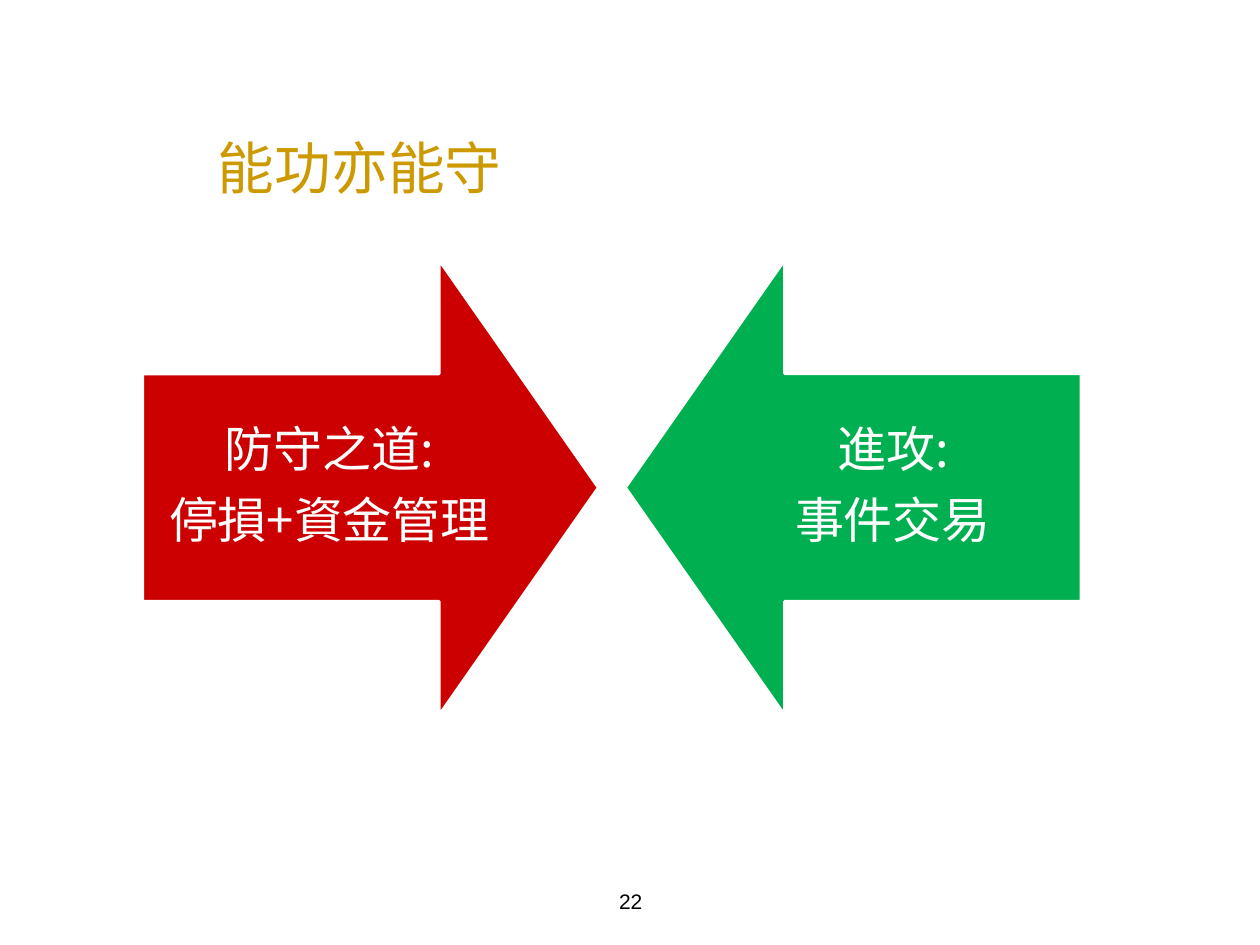
"""Build a slide with two facing arrows, defence against attack."""
from dataclasses import dataclass

from lxml.etree import SubElement
from pptx import Presentation
from pptx.dml.color import RGBColor
from pptx.enum.shapes import MSO_SHAPE as Shape
from pptx.enum.text import MSO_ANCHOR as Anchor, MSO_AUTO_SIZE as AutoSize, PP_ALIGN as Align
from pptx.oxml.ns import qn
from pptx.util import Cm, Pt

COLORS = {"gold": "CC9900", "red": "CC0000", "green": "00B050", "white": "FFFFFF", "black": "000000"}
CJK = "Noto Sans CJK SC"
ARROW_TOP, ARROW_SIZE = 5.23, 9.2
LABEL_TOP, LABEL_WIDTH, LABEL_HEIGHT = 7.52, 7.6, 4.6


@dataclass
class Arrow:
    left: float
    label_left: float
    rotation: int
    color: str
    lines: tuple[str, ...]


ARROWS = (
    Arrow(2.87, 2.84, 270, "red", ("防守之道:", "停損+資金管理")),
    Arrow(12.6, 14.2, 90, "green", ("進攻:", "事件交易")),
)


def rgb(name: str) -> RGBColor:
    return RGBColor.from_string(COLORS[name])


def write(sp, *lines: str, size: float, color: str, font: str = CJK, align=Align.CENTER,
          inset: float | None = None, spacing: float | None = None, after: float = 0) -> None:
    """Fill a shape with one formatted paragraph per line."""
    tf = sp.text_frame
    tf.word_wrap, tf.auto_size, tf.vertical_anchor = True, AutoSize.NONE, Anchor.MIDDLE
    if inset is not None:
        tf.margin_left = tf.margin_right = tf.margin_top = tf.margin_bottom = Cm(inset)
    for i, line in enumerate(lines):
        p = tf.add_paragraph() if i else tf.paragraphs[0]
        p.alignment, p.line_spacing, p.space_after = align, spacing, Pt(after)
        r = p.add_run()
        r.text = line
        r.font.size, r.font.name = Pt(size), font
        r.font.color.rgb = rgb(color)
        SubElement(r._r.get_or_add_rPr(), qn("a:ea"), typeface=font)


def draw_arrow(s, arrow: Arrow) -> None:
    """Draw an arrow and the label over its shaft."""
    sp = s.shapes.add_shape(Shape.DOWN_ARROW, Cm(arrow.left), Cm(ARROW_TOP), Cm(ARROW_SIZE), Cm(ARROW_SIZE))
    sp.rotation = arrow.rotation
    sp.adjustments[0], sp.adjustments[1] = 0.5, 0.35
    sp.shadow.inherit = False
    sp.fill.solid()
    sp.fill.fore_color.rgb = rgb(arrow.color)
    sp.line.color.rgb = rgb("white")
    sp.line.width = Pt(2)
    label = s.shapes.add_textbox(Cm(arrow.label_left), Cm(LABEL_TOP), Cm(LABEL_WIDTH), Cm(LABEL_HEIGHT))
    write(label, *arrow.lines, size=28, color="white", inset=0.56, spacing=0.9, after=9.8)


def main() -> None:
    """Build and save the slide."""
    prs = Presentation()
    prs.slide_width, prs.slide_height = Cm(25.4), Cm(19.05)
    s = prs.slides.add_slide(prs.slide_layouts[5])
    title = s.shapes.title
    title.left, title.top, title.width, title.height = Cm(4.14), Cm(2.62), Cm(15.9), Cm(1.47)
    write(title, "能功亦能守", size=32.4, color="gold", align=Align.LEFT)
    number = s.shapes.add_textbox(Cm(8.69), Cm(17.65), Cm(8.05), Cm(1.02))
    write(number, "22", size=12, color="black", font="Arial")
    for arrow in ARROWS:
        draw_arrow(s, arrow)
    prs.save("out.pptx")


if __name__ == "__main__":
    main()
